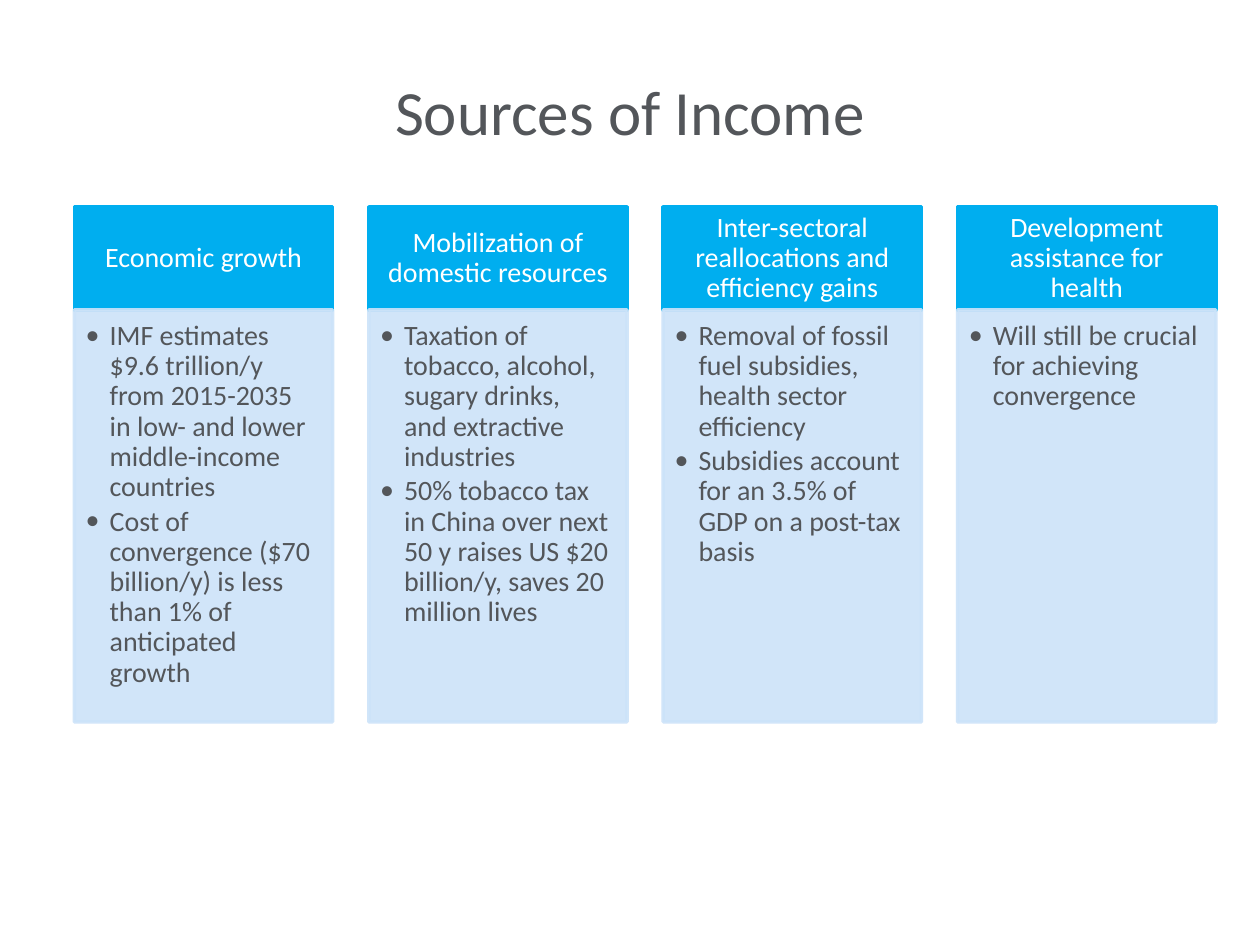
from lxml.etree import SubElement
from pptx import Presentation
from pptx.dml.color import RGBColor
from pptx.enum.shapes import MSO_SHAPE
from pptx.enum.text import MSO_ANCHOR, PP_ALIGN
from pptx.oxml.ns import qn
from pptx.util import Inches, Pt

BLUE, PALE, GREY, WHITE = "00AEEF", "CCE3F9", "53565A", "FFFFFF"
LEFT, TOP, WIDTH = 0.59, 1.64, 2.05
PITCH = (7.6 - LEFT) / 3
HEADER_HEIGHT, BODY_HEIGHT = 0.82, 3.27

columns = [
    ("Economic growth", [
        "IMF estimates $9.6 trillion/y from 2015-2035 in low- and lower middle-income countries",
        "Cost of convergence ($70 billion/y) is less than 1% of anticipated growth"]),
    ("Mobilization of domestic resources", [
        "Taxation of tobacco, alcohol, sugary drinks,\vand extractive industries",
        "50% tobacco tax in China over next 50 y raises US $20 billion/y, saves 20 million lives"]),
    ("Inter-sectoral reallocations and efficiency gains", [
        "Removal of fossil fuel subsidies, health sector efficiency",
        "Subsidies account for an 3.5% of GDP on a post-tax basis"]),
    ("Development assistance for health", [
        "Will still be crucial for achieving convergence"]),
]


def add_panel(left, top, height, color, margins, anchor):
    """Add a rectangle with matching fill and line, ready for text."""
    panel = slide.shapes.add_shape(MSO_SHAPE.RECTANGLE, Inches(left), Inches(top),
                                   Inches(WIDTH), Inches(height))
    panel.shadow.inherit = False
    panel.fill.solid()
    panel.fill.fore_color.rgb = RGBColor.from_string(color)
    panel.line.color.rgb = RGBColor.from_string(color)
    panel.line.width = Pt(2)
    frame = panel.text_frame
    frame.word_wrap = True
    frame.vertical_anchor = anchor
    (frame.margin_left, frame.margin_top,
     frame.margin_right, frame.margin_bottom) = map(Inches, margins)
    return panel


def format_runs(para, size, color):
    for span in para.runs:
        span.font.name = "Calibri"
        span.font.size = Pt(size)
        span.font.color.rgb = RGBColor.from_string(color)


deck = Presentation()
deck.slide_width, deck.slide_height = Inches(10), Inches(7.5)
slide = deck.slides.add_slide(deck.slide_layouts[5])

title = slide.shapes.title
title.left, title.top = Inches(0.5), Inches(0.25)
title.width, title.height = Inches(9), Inches(1.25)
title.text_frame.text = "Sources of Income"
title.text_frame.vertical_anchor = MSO_ANCHOR.MIDDLE
title.text_frame.paragraphs[0].alignment = PP_ALIGN.CENTER
format_runs(title.text_frame.paragraphs[0], 36, GREY)

for index, (heading, points) in enumerate(columns):
    left = LEFT + index * PITCH
    header = add_panel(left, TOP, HEADER_HEIGHT, BLUE,
                       (0.12, 0.07, 0.12, 0.07), MSO_ANCHOR.MIDDLE)
    header.text_frame.text = heading
    para = header.text_frame.paragraphs[0]
    para.alignment = PP_ALIGN.CENTER
    para.line_spacing = 0.9
    format_runs(para, 16, WHITE)

    body = add_panel(left, TOP + HEADER_HEIGHT, BODY_HEIGHT, PALE,
                     (0.09, 0.09, 0.12, 0.14), MSO_ANCHOR.TOP)
    for color in body._element.spPr.iter(qn("a:srgbClr")):
        SubElement(color, qn("a:alpha"), val="90000")
    body.text_frame.text = "\n".join(points)
    for para in body.text_frame.paragraphs:
        para.alignment = PP_ALIGN.LEFT
        para.line_spacing = 0.9
        para.space_after = Pt(2.5)
        properties = para._p.get_or_add_pPr()
        properties.set("marL", str(Inches(0.19)))
        properties.set("indent", str(-Inches(0.19)))
        SubElement(properties, qn("a:buFont"), typeface="Calibri")
        SubElement(properties, qn("a:buChar"), char="•")
        format_runs(para, 16, GREY)

deck.save("out.pptx")
